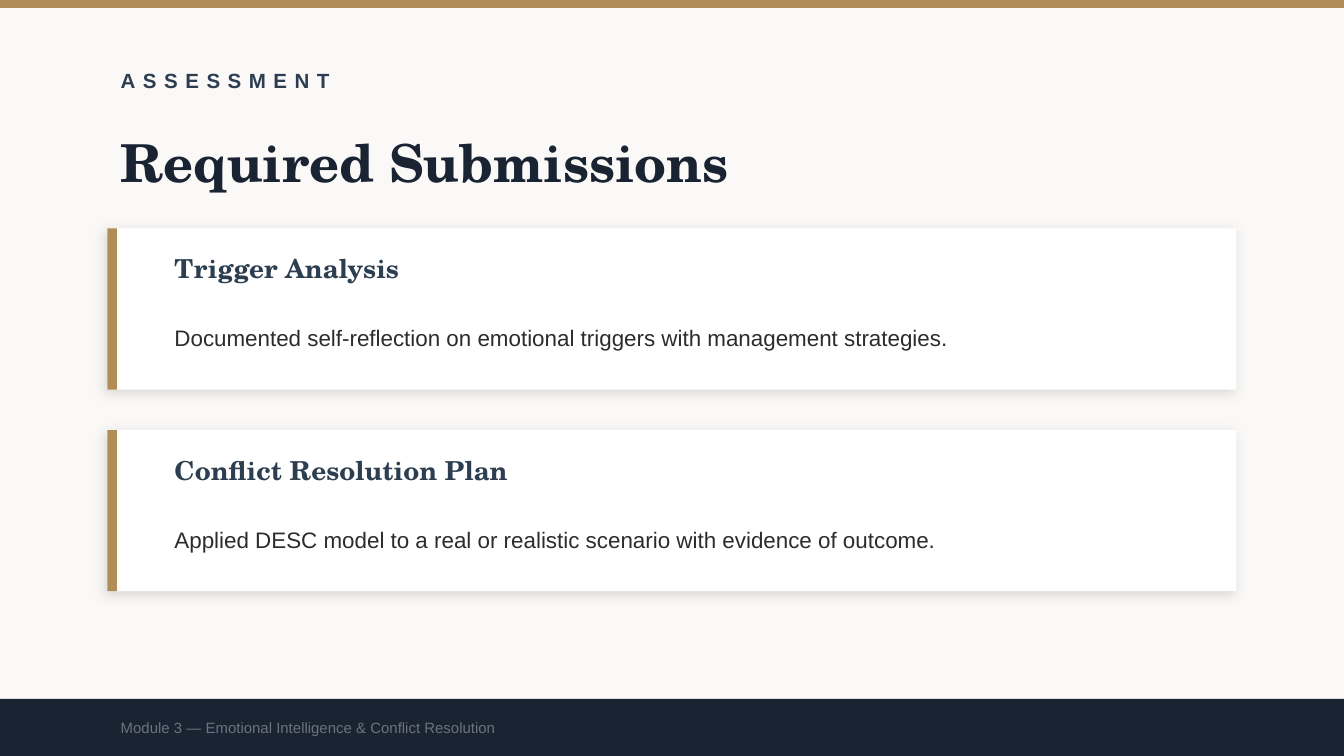
from lxml import etree
from pptx import Presentation
from pptx.dml.color import RGBColor
from pptx.enum.shapes import MSO_SHAPE
from pptx.enum.text import MSO_ANCHOR
from pptx.oxml.ns import qn
from pptx.util import Pt

RECTANGLE = MSO_SHAPE.RECTANGLE
MIDDLE = MSO_ANCHOR.MIDDLE

COLORS = {
    "paper": "FAF9F7", "gold": "B08D57", "navy": "1A2332", "slate": "2C3E50",
    "ink": "2C2C2C", "grey": "6B7280", "white": "FFFFFF", "black": "000000",
}
SANS, SERIF = "Arial", "TeX Gyre Schola"
FORMATS = {
    "eyebrow": {"name": SANS, "size": Pt(11), "bold": True},
    "title": {"name": SERIF, "size": Pt(28), "bold": True},
    "heading": {"name": SERIF, "size": Pt(14), "bold": True},
    "body": {"name": SANS, "size": Pt(12)},
    "footer": {"name": SANS, "size": Pt(8)},
}

WIDTH, HEIGHT = 720, 405
MARGIN = 57.6
CARD_TOP, CARD_WIDTH, CARD_HEIGHT, CARD_STEP = 122.4, 604.8, 86.4, 108
SUBMISSIONS = [
    ("Trigger Analysis",
     "Documented self-reflection on emotional triggers with management strategies."),
    ("Conflict Resolution Plan",
     "Applied DESC model to a real or realistic scenario with evidence of outcome."),
]


def rgb(color):
    return RGBColor.from_string(COLORS[color])


def add_block(slide, left, top, width, height, color):
    block = slide.shapes.add_shape(RECTANGLE, Pt(left), Pt(top), Pt(width), Pt(height))
    block.shadow.inherit = False
    block.fill.solid()
    block.fill.fore_color.rgb = rgb(color)
    block.line.fill.background()
    return block


def add_text(slide, left, top, width, height, text, style, color):
    box = slide.shapes.add_textbox(Pt(left), Pt(top), Pt(width), Pt(height))
    frame = box.text_frame
    frame.word_wrap = True
    frame.vertical_anchor = MIDDLE
    paragraph = frame.paragraphs[0]
    run = paragraph.add_run()
    run.text = text
    for attribute, value in FORMATS[style].items():
        setattr(run.font, attribute, value)
    run.font.color.rgb = rgb(color)
    return paragraph


def add_soft_shadow(block):
    effects = block._element.spPr.find(qn("a:effectLst"))
    shadow = etree.SubElement(effects, qn("a:outerShdw"), {
        "blurRad": str(Pt(6)), "dist": str(Pt(2)), "dir": str(135 * 60000),
        "algn": "bl", "rotWithShape": "0"})
    tint = etree.SubElement(shadow, qn("a:srgbClr"), val=COLORS["black"])
    etree.SubElement(tint, qn("a:alpha"), val="12000")


def add_header(slide, left, top, width):
    eyebrow = add_text(slide, left, top, width, 28.8, "ASSESSMENT", "eyebrow", "slate")
    # Letter spacing of 4 pt, in hundredths of a point
    eyebrow.runs[0].font._element.set("spc", "400")
    add_text(slide, left, top + 36, width, 43.2, "Required Submissions", "title", "navy")


def add_card(slide, left, top, width, height, heading, description):
    add_soft_shadow(add_block(slide, left, top, width, height, "white"))
    add_block(slide, left, top, 5.04, height, "gold")
    text_left, text_width = left + 28.8, width - 50.4
    add_text(slide, text_left, top + 8.64, text_width, 25.2, heading, "heading", "slate")
    body = add_text(slide, text_left, top + 36, text_width, 39.6,
                    description, "body", "ink")
    body.line_spacing = 1.4


def add_footer(slide, top, height):
    add_block(slide, 0, top, WIDTH, height, "navy")
    add_text(slide, MARGIN, top, 576, height,
             "Module 3 — Emotional Intelligence & Conflict Resolution", "footer", "grey")


def main():
    deck = Presentation()
    deck.slide_width, deck.slide_height = Pt(WIDTH), Pt(HEIGHT)
    slide = deck.slides.add_slide(deck.slide_layouts[6])
    slide.background.fill.solid()
    slide.background.fill.fore_color.rgb = rgb("paper")

    # Top rule and header
    add_block(slide, 0, 0, WIDTH, 4.32, "gold")
    add_header(slide, MARGIN, 28.8, 576)

    # Submission cards
    for index, (heading, description) in enumerate(SUBMISSIONS):
        add_card(slide, MARGIN, CARD_TOP + index * CARD_STEP, CARD_WIDTH, CARD_HEIGHT,
                 heading, description)

    # Footer band
    add_footer(slide, 374.4, HEIGHT - 374.4)
    deck.save("out.pptx")


if __name__ == "__main__":
    main()
